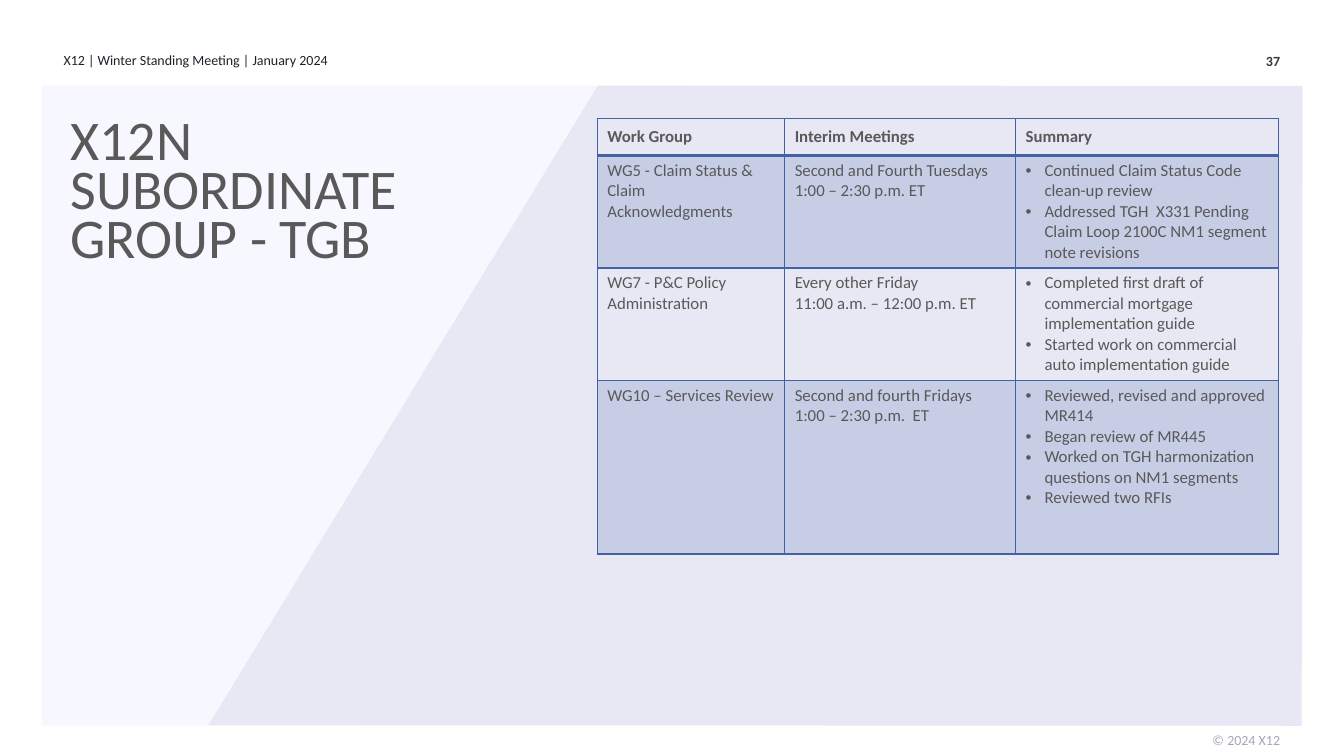
"""Build the X12N subordinate group TGB slide with its work group table."""
from lxml import etree
from pptx import Presentation
from pptx.dml.color import RGBColor
from pptx.enum.shapes import MSO_SHAPE
from pptx.enum.text import MSO_ANCHOR, MSO_AUTO_SIZE, PP_ALIGN
from pptx.oxml.ns import qn
from pptx.util import Pt

RECTANGLE = MSO_SHAPE.RECTANGLE
TOP, MIDDLE = MSO_ANCHOR.TOP, MSO_ANCHOR.MIDDLE
NO_AUTOFIT = MSO_AUTO_SIZE.NONE
LEFT, RIGHT = PP_ALIGN.LEFT, PP_ALIGN.RIGHT
TEXT_GREY, TABLE_BLUE = "595959", "4361A3"


def color(hex_string):
    return RGBColor.from_string(hex_string)


def style_paragraph(paragraph, size, hex_string, bold=False, alignment=LEFT):
    paragraph.alignment = alignment
    font = paragraph.font
    font.name, font.size, font.bold = "Calibri", Pt(size), bold
    font.color.rgb = color(hex_string)


presentation = Presentation()
presentation.slide_width, presentation.slide_height = Pt(960), Pt(540)
slide = presentation.slides.add_slide(presentation.slide_layouts[5])
shapes = slide.shapes

panel = shapes.add_shape(RECTANGLE, Pt(30), Pt(61.2), Pt(900), Pt(457.2))
outline = shapes.build_freeform(Pt(149), Pt(518))
outline.add_line_segments(
    [(Pt(427), Pt(61.2)), (Pt(930.5), Pt(61.6)), (Pt(929.8), Pt(518.4))])
slant = outline.convert_to_shape()
for shape, fill in ((panel, "F7F7FF"), (slant, "E8E8F5")):
    shape.shadow.inherit = False
    shape.fill.solid()
    shape.fill.fore_color.rgb = color(fill)
    shape.line.fill.background()

running_texts = [
    ("X12 | Winter Standing Meeting | January 2024", 45.4, 36.7, 324, "21212B", False, LEFT),
    ("37", 805.6, 37.4, 108.7, "363640", True, RIGHT),
    ("© 2024 X12", 805.6, 522.7, 108.7, "A6A6BA", False, RIGHT),
]
for text, left, top, width, hex_string, bold, alignment in running_texts:
    text_box = shapes.add_textbox(Pt(left), Pt(top), Pt(width), Pt(18))
    frame = text_box.text_frame
    frame.word_wrap = True
    frame.margin_left = frame.margin_right = frame.margin_top = frame.margin_bottom = 0
    frame.text = text
    style_paragraph(frame.paragraphs[0], 10, hex_string, bold, alignment)

title = shapes.title
title.left, title.top, title.width, title.height = Pt(50.4), Pt(87.8), Pt(265.7), Pt(136.8)
frame = title.text_frame
frame.text = "X12N SUBORDINATE GROUP - TGB"
frame.auto_size, frame.word_wrap, frame.vertical_anchor = NO_AUTOFIT, True, TOP
frame.margin_left = frame.margin_right = frame.margin_top = frame.margin_bottom = 0
frame.paragraphs[0].line_spacing = Pt(35)
style_paragraph(frame.paragraphs[0], 40, TEXT_GREY)
slant._element.addnext(title._element)

table_rows = [
    (["Work Group"], ["Interim Meetings"], ["Summary"]),
    (["WG5 - Claim Status & Claim Acknowledgments"],
     ["Second and Fourth Tuesdays", "1:00 – 2:30 p.m. ET"],
     ["Continued Claim Status Code clean-up review",
      "Addressed TGH  X331 Pending Claim Loop 2100C NM1 segment note revisions"]),
    (["WG7 - P&C Policy Administration"],
     ["Every other Friday", "11:00 a.m. – 12:00 p.m. ET"],
     ["Completed first draft of commercial mortgage implementation guide",
      "Started work on commercial auto implementation guide"]),
    (["WG10 – Services Review"],
     ["Second and fourth Fridays", "1:00 – 2:30 p.m.  ET"],
     ["Reviewed, revised and approved MR414",
      "Began review of MR445",
      "Worked on TGH harmonization questions on NM1 segments",
      "Reviewed two RFIs"]),
]
column_widths = [133.9, 164.9, 187.9]
row_heights = [26.4, 80.4, 80.4, 124]
table = shapes.add_table(
    len(row_heights), len(column_widths), Pt(426.6), Pt(84.6),
    Pt(sum(column_widths)), Pt(sum(row_heights))).table
table.first_row = table.horz_banding = False
for column, width in zip(table.columns, column_widths):
    column.width = Pt(width)

for row_index, row_texts in enumerate(table_rows):
    table.rows[row_index].height = Pt(row_heights[row_index])
    is_header = row_index == 0
    border_widths = {
        "a:lnL": 1, "a:lnR": 1,
        "a:lnT": 2 if row_index == 1 else 1,
        "a:lnB": 2 if row_index in (0, len(table_rows) - 1) else 1,
    }
    for column_index, lines in enumerate(row_texts):
        cell = table.cell(row_index, column_index)
        cell.vertical_anchor = MIDDLE if is_header else TOP
        properties = cell._tc.get_or_add_tcPr()
        for tag, width in border_widths.items():
            border = etree.SubElement(properties, qn(tag), w=str(Pt(width)))
            border_fill = etree.SubElement(border, qn("a:solidFill"))
            etree.SubElement(border_fill, qn("a:srgbClr"), val=TABLE_BLUE)
        if row_index % 2:
            cell.fill.solid()
            cell.fill.fore_color.rgb = color(TABLE_BLUE)
            fill_color = properties.find(qn("a:solidFill")).find(qn("a:srgbClr"))
            etree.SubElement(fill_color, qn("a:alpha"), val="20000")
        else:
            cell.fill.background()

        cell.text = "\n".join(lines)
        for paragraph in cell.text_frame.paragraphs:
            if column_index == 2 and not is_header:
                paragraph_properties = paragraph._p.get_or_add_pPr()
                paragraph_properties.set("marL", str(Pt(13.5)))
                paragraph_properties.set("indent", str(Pt(-13.5)))
                etree.SubElement(paragraph_properties, qn("a:buFont"), typeface="Arial")
                etree.SubElement(paragraph_properties, qn("a:buChar"), char="•")
            style_paragraph(paragraph, 12, TEXT_GREY, is_header)

presentation.save("out.pptx")
